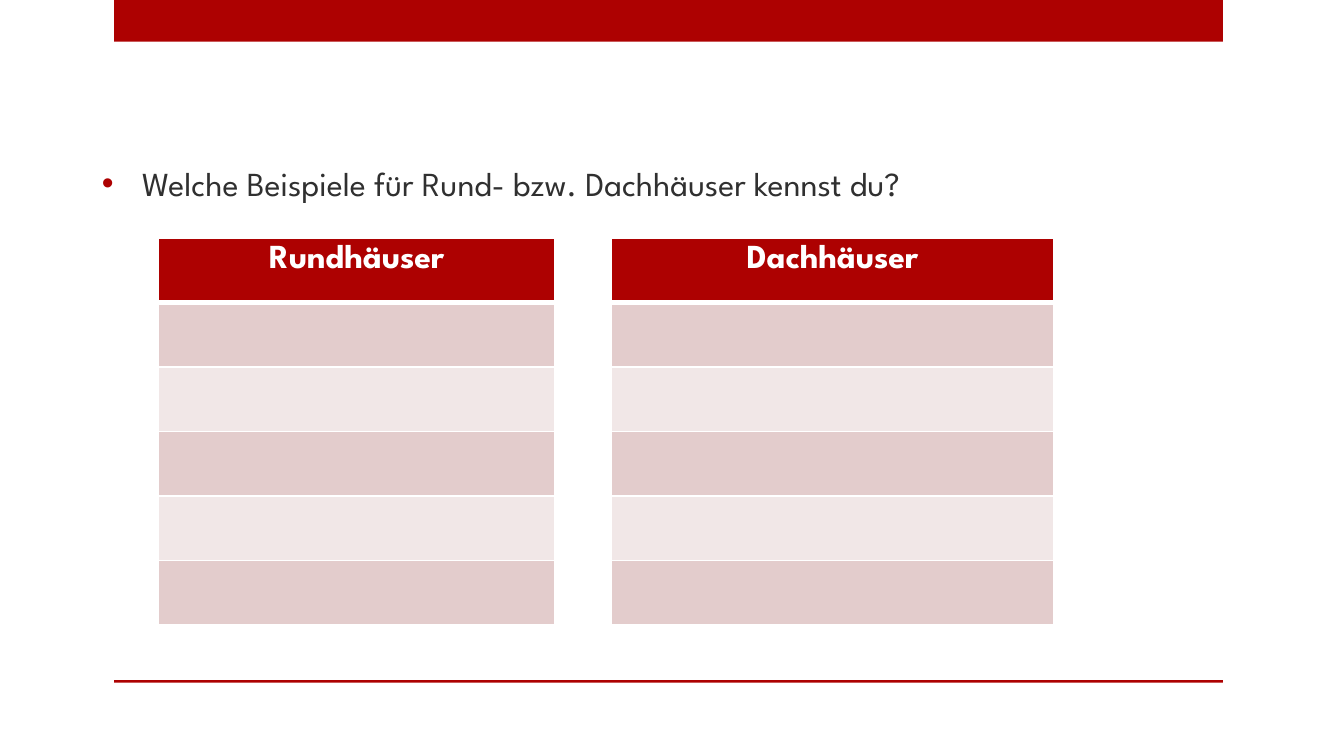
"""Build a slide asking for examples of round and gabled houses."""
import lxml.etree
import pptx
import pptx.dml.color
import pptx.enum.shapes
import pptx.enum.text
import pptx.oxml.ns
import pptx.util

Inches = pptx.util.Inches
Pt = pptx.util.Pt
qn = pptx.oxml.ns.qn

FONT = "League Spartan"
RED, WHITE, INK = "AD0101", "FFFFFF", "303030"
BANDS = ["E3CCCC", "F1E7E7"]
QUESTION = "Welche Beispiele für Rund- bzw. Dachhäuser kennst du?"
HEADINGS = ["Rundhäuser", "", "Dachhäuser"]
COLUMN_WIDTHS = [2.95, 0.42, 3.29]
ROW_COUNT, ROW_HEIGHT = 6, 0.48
BARS = [(0, 0.31), (5.06, 0.02)]


def color(value):
    return pptx.dml.color.RGBColor.from_string(value)


def style(paragraph, value, bold=False):
    paragraph.font.name = FONT
    paragraph.font.size = Pt(18)
    paragraph.font.bold = bold
    paragraph.font.color.rgb = color(value)


def add_bar(page, top, height):
    bar = page.shapes.add_shape(
        pptx.enum.shapes.MSO_SHAPE.RECTANGLE,
        Inches(0.85), Inches(top), Inches(8.25), Inches(height))
    bar.shadow.inherit = False
    bar.fill.solid()
    bar.fill.fore_color.rgb = color(RED)
    bar.line.fill.background()


def add_question(page):
    box = page.shapes.add_textbox(Inches(0.66), Inches(0.68), Inches(8.33), Inches(1.84))
    frame = box.text_frame
    frame.word_wrap = True
    frame.vertical_anchor = pptx.enum.text.MSO_ANCHOR.MIDDLE
    frame.margin_bottom = Inches(0.52)
    para = frame.paragraphs[0]
    para.text = QUESTION
    style(para, INK)
    properties = para._p.get_or_add_pPr()
    properties.set("marL", str(Inches(0.3)))
    properties.set("indent", str(-Inches(0.3)))
    bullet_color = lxml.etree.Element(qn("a:buClr"))
    lxml.etree.SubElement(bullet_color, qn("a:srgbClr"), val=RED)
    bullet_font = lxml.etree.Element(qn("a:buFont"), typeface="Arial")
    bullet = lxml.etree.Element(qn("a:buChar"), char="•")
    for position, element in enumerate([bullet_color, bullet_font, bullet]):
        properties.insert(position, element)


def set_borders(cell, widths):
    properties = cell._tc.get_or_add_tcPr()
    for side, width in widths.items():
        line = lxml.etree.SubElement(properties, qn("a:ln" + side), w=str(Pt(width)))
        fill = lxml.etree.SubElement(line, qn("a:solidFill"))
        lxml.etree.SubElement(fill, qn("a:srgbClr"), val=WHITE)


def add_house_table(page):
    table = page.shapes.add_table(
        ROW_COUNT, len(HEADINGS), Inches(1.18), Inches(1.77),
        Inches(sum(COLUMN_WIDTHS)), Inches(ROW_COUNT * ROW_HEIGHT)).table
    for column, width in zip(table.columns, COLUMN_WIDTHS):
        column.width = Inches(width)
    for row_index, row in enumerate(table.rows):
        row.height = Inches(ROW_HEIGHT)
        band = BANDS[(row_index - 1) % 2] if row_index else RED
        top = 3 if row_index == 1 else 1
        bottom = 1 if row_index else 3
        for heading, cell in zip(HEADINGS, row.cells):
            set_borders(cell, {"L": 1, "R": 1, "T": top, "B": bottom})
            cell.fill.solid()
            cell.fill.fore_color.rgb = color(band if heading else WHITE)
            if heading and row_index == 0:
                cell.text = heading
                para = cell.text_frame.paragraphs[0]
                para.alignment = pptx.enum.text.PP_ALIGN.CENTER
                style(para, WHITE, bold=True)


def main():
    deck = pptx.Presentation()
    deck.slide_width = Inches(10)
    deck.slide_height = deck.slide_width * 9 // 16
    page = deck.slides.add_slide(deck.slide_layouts[6])
    for top, height in BARS:
        add_bar(page, top, height)
    add_question(page)
    add_house_table(page)
    deck.save("out.pptx")


if __name__ == "__main__":
    main()
